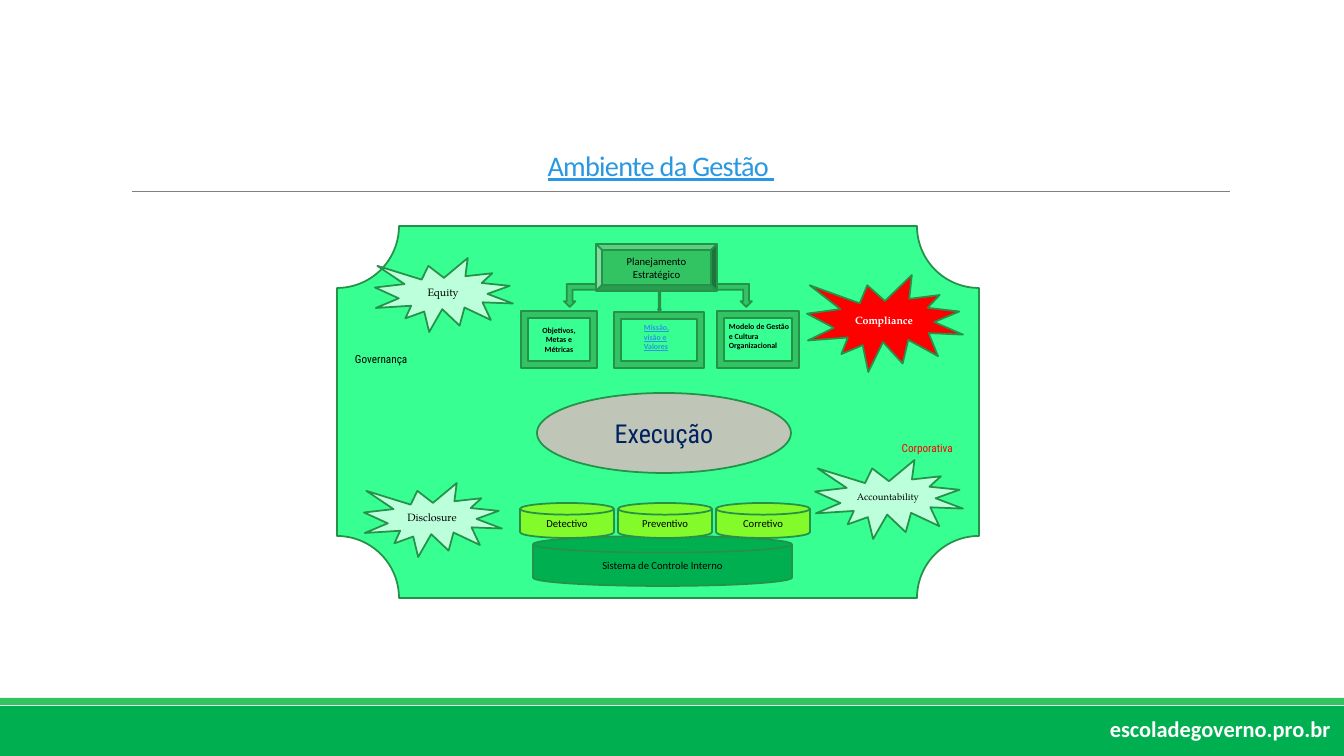
from lxml import etree
from pptx import Presentation
from pptx import util as u
from pptx.dml.color import RGBColor
from pptx.enum import shapes, text
from pptx.oxml.ns import qn

WHITE = RGBColor(0xFF, 0xFF, 0xFF)
BLACK = RGBColor(0, 0, 0)
GRAY = RGBColor(0x80, 0x80, 0x80)
RED = RGBColor(0xFF, 0, 0)
NAVY = RGBColor(0, 0x20, 0x60)
BLUE = RGBColor(0x29, 0x98, 0xE3)
DEEP_GREEN = RGBColor(0, 0xB0, 0x50)
GREEN = RGBColor(0x32, 0xC4, 0x63)
OUTLINE = RGBColor(0x25, 0x91, 0x49)
MINT = RGBColor(0x37, 0xFF, 0x92)
PALE_MINT = RGBColor(0xBC, 0xFF, 0xDB)
LIME = RGBColor(0x83, 0xFA, 0x2A)
SAGE = RGBColor(0xBF, 0xC6, 0xB8)

SANS = "Calibri"
CONDENSED = "Roboto Condensed"
SERIF = "TeX Gyre Pagella"
KIND = shapes.MSO_SHAPE
ALIGN = text.PP_ALIGN
ANCHOR = text.MSO_ANCHOR


def px(value):
    return round(value * 914400 / 100.8)


class Board:
    def __init__(self, slide):
        self.shapes = slide.shapes

    def caption(self, holder, words, size, color=BLACK, font=SANS, bold=False,
                underline=False, align=ALIGN.CENTER, anchor=ANCHOR.MIDDLE, wrap=True):
        frame = holder.text_frame
        frame.word_wrap = wrap
        frame.vertical_anchor = anchor
        paragraph = frame.paragraphs[0]
        paragraph.text = words
        paragraph.alignment = align
        style = paragraph.font
        style.name, style.size = font, u.Pt(size)
        style.bold, style.underline = bold, underline
        style.color.rgb = color
        return paragraph

    def shape(self, kind, box, fill, outline=OUTLINE, flip=""):
        shape = self.shapes.add_shape(kind, *map(px, box))
        shape.shadow.inherit = False
        shape.fill.solid()
        shape.fill.fore_color.rgb = fill
        if outline is None:
            shape.line.fill.background()
        else:
            shape.line.color.rgb = outline
            shape.line.width = u.Pt(1.25)
        for axis in flip:
            shape._element.spPr.xfrm.set("flip" + axis, "1")
        return shape

    def label(self, box, words, size, inset=True, **style):
        holder = self.shapes.add_textbox(*map(px, box))
        if not inset:
            frame = holder.text_frame
            frame.margin_left = frame.margin_right = 0
            frame.margin_top = frame.margin_bottom = 0
        return self.caption(holder, words, size, **style)

    def rule(self, x1, y1, x2, y2):
        line = self.shapes.add_connector(shapes.MSO_CONNECTOR.STRAIGHT, *map(px, (x1, y1, x2, y2)))
        line.line.color.rgb = GRAY
        line.line.width = u.Pt(0.5)
        etree.SubElement(line._element.spPr, qn("a:effectLst"))


def main():
    deck = Presentation()
    deck.slide_width, deck.slide_height = px(1344), px(756)
    board = Board(deck.slides.add_slide(deck.slide_layouts[6]))

    board.shape(KIND.RECTANGLE, (0, 706, 1344, 50), DEEP_GREEN, None)
    board.shape(KIND.RECTANGLE, (0, 698, 1344, 7), GREEN, None)
    board.rule(132, 191, 1230, 191)
    board.label((1100, 710, 244, 37), "escoladegoverno.pro.br", 16, color=WHITE,
                bold=True, align=ALIGN.LEFT, anchor=ANCHOR.TOP, wrap=False)

    board.shape(KIND.PLAQUE, (337, 226, 642, 372), MINT)
    title = board.label((406, 161, 510, 26), "Ambiente da Gestão ", 20.2, color=BLUE,
                        underline=True, anchor=ANCHOR.BOTTOM)
    title.line_spacing = 0.85
    title.runs[0].font._element.set("spc", "-50")
    board.label((355, 351, 80, 16), "Governança", 8, inset=False, font=CONDENSED,
                align=ALIGN.LEFT)
    board.label((873, 440, 80, 16), "Corporativa", 8, inset=False, font=CONDENSED,
                color=RED, align=ALIGN.RIGHT)

    planning = board.shape(KIND.BEVEL, (596, 244, 121, 47), GREEN)
    board.caption(planning, "Planejamento Estratégico", 7.6)
    goals = board.shape(KIND.FRAME, (521, 311, 76, 57), GREEN)
    board.caption(goals, "Objetivos, Metas e Métricas", 5.6, bold=True)
    board.shape(KIND.FRAME, (614, 312, 90, 56), GREEN)
    board.shape(KIND.FRAME, (717, 311, 82, 57), GREEN)
    board.label((634, 318, 51, 39), "Missão, visão e Valores", 5.6, color=BLUE, bold=True,
                underline=True, align=ALIGN.LEFT, anchor=ANCHOR.TOP)
    board.label((719, 317, 83, 39), "Modelo de Gestão e Cultura Organizacional", 5.6,
                bold=True, align=ALIGN.LEFT, anchor=ANCHOR.TOP)

    board.shape(KIND.DOWN_ARROW, (658, 291, 3, 20), GREEN)
    board.shape(KIND.BENT_UP_ARROW, (564, 284, 32, 23), GREEN, flip="HV")
    board.shape(KIND.BENT_UP_ARROW, (717, 284, 35, 23), GREEN, flip="V")

    execution = board.shape(KIND.OVAL, (537, 393, 254, 80), SAGE)
    board.caption(execution, "Execução", 18.6, color=NAVY, font=CONDENSED)

    control = board.shape(KIND.FLOWCHART_MAGNETIC_DISK, (533, 536, 259, 50), DEEP_GREEN)
    board.caption(control, "Sistema de Controle Interno", 7.6)
    for index, name in enumerate(("Detectivo", "Preventivo", "Corretivo")):
        disk = board.shape(KIND.FLOWCHART_MAGNETIC_DISK, (520 + 98 * index, 503, 94, 35), LIME)
        board.caption(disk, name, 7.6)

    principles = (
        ("Disclosure", (364, 483, 138, 74), PALE_MINT, BLACK, 7.6, False),
        ("Accountability", (815, 460, 148, 79), PALE_MINT, BLACK, 6.8, False),
        ("Compliance", (807, 275, 156, 97), RED, WHITE, 7.6, True),
        ("Equity", (375, 258, 138, 74), PALE_MINT, BLACK, 7.6, False),
    )
    for name, box, fill, color, size, bold in principles:
        burst = board.shape(KIND.EXPLOSION1, box, fill)
        board.caption(burst, name, size, color=color, font=SERIF, bold=bold)

    deck.save("out.pptx")


if __name__ == "__main__":
    main()
